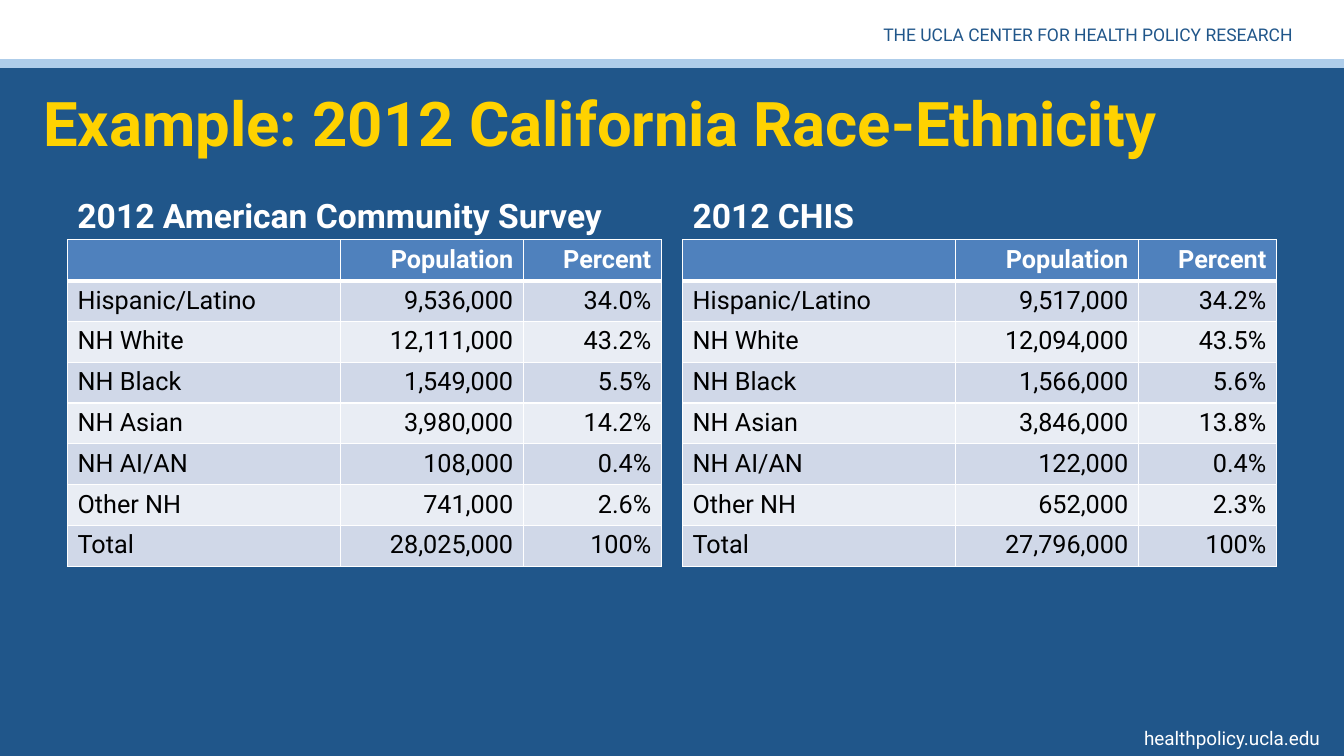
from dataclasses import dataclass

import lxml.etree
import pptx
import pptx.dml.color
import pptx.enum.shapes
import pptx.enum.text
import pptx.oxml.ns
import pptx.slide
import pptx.table
import pptx.util

Inches = pptx.util.Inches
RGBColor = pptx.dml.color.RGBColor
Align = pptx.enum.text.PP_ALIGN
Anchor = pptx.enum.text.MSO_ANCHOR

FONT = "Roboto"
NAVY = RGBColor(0x20, 0x56, 0x8A)
LIGHT_BLUE = RGBColor(0xAE, 0xCD, 0xEA)
YELLOW = RGBColor(0xFF, 0xD2, 0x00)
WHITE = RGBColor(0xFF, 0xFF, 0xFF)
BLACK = RGBColor(0x00, 0x00, 0x00)
HEADER_BLUE = RGBColor(0x4F, 0x81, 0xBD)
BAND_DARK = RGBColor(0xD0, 0xD8, 0xE8)
BAND_LIGHT = RGBColor(0xE9, 0xED, 0xF4)

SLIDE_WIDTH = 13.33
SURVEY_TOP = 1.68
TABLE_TOP = 2.38
TABLE_HEIGHT = 3.24
COLUMN_WIDTHS = (2.71, 1.81, 1.37)
TABLE_WIDTH = sum(COLUMN_WIDTHS)
HEADER = ("", "Population", "Percent")
GROUPS = ("Hispanic/Latino", "NH White", "NH Black", "NH Asian",
          "NH AI/AN", "Other NH", "Total")


@dataclass
class Label:
    text: str
    left: float
    top: float
    width: float
    height: float
    size: float
    color: RGBColor
    bold: bool = False
    align: Align = Align.LEFT
    anchor: Anchor = Anchor.TOP


@dataclass
class Survey:
    name: str
    left: float
    populations: tuple[str, ...]
    percents: tuple[str, ...]


LABELS = (
    Label("healthpolicy.ucla.edu", 10.75, 7.16, 2.44, 0.34, 13.5, WHITE,
          align=Align.RIGHT),
    Label("THE UCLA CENTER FOR HEALTH POLICY RESEARCH", 7.42, 0.19, 5.5, 0.32,
          12.5, NAVY, align=Align.RIGHT),
    Label("Example: 2012 California Race-Ethnicity", 0.33, 0.58, 12.67, 1.25,
          44, YELLOW, bold=True, anchor=Anchor.MIDDLE),
)

SURVEYS = (
    Survey("2012 American Community Survey", 0.67,
           ("9,536,000", "12,111,000", "1,549,000", "3,980,000",
            "108,000", "741,000", "28,025,000"),
           ("34.0%", "43.2%", "5.5%", "14.2%", "0.4%", "2.6%", "100%")),
    Survey("2012 CHIS", 6.77,
           ("9,517,000", "12,094,000", "1,566,000", "3,846,000",
            "122,000", "652,000", "27,796,000"),
           ("34.2%", "43.5%", "5.6%", "13.8%", "0.4%", "2.3%", "100%")),
)


def set_text(tf: pptx.text.text.TextFrame, text: str, size: float,
             color: RGBColor, bold: bool, align: Align) -> None:
    tf.text = text
    p = tf.paragraphs[0]
    p.alignment = align
    for r in p.runs:
        r.font.name = FONT
        r.font.size = pptx.util.Pt(size)
        r.font.bold = bold
        r.font.color.rgb = color


def add_label(s: pptx.slide.Slide, label: Label) -> None:
    sp = s.shapes.add_textbox(Inches(label.left), Inches(label.top),
                              Inches(label.width), Inches(label.height))
    tf = sp.text_frame
    tf.word_wrap = True
    tf.vertical_anchor = label.anchor
    set_text(tf, label.text, label.size, label.color, label.bold, label.align)


def add_banner(s: pptx.slide.Slide) -> None:
    sp = s.shapes.add_shape(pptx.enum.shapes.MSO_SHAPE.RECTANGLE, 0, 0,
                            Inches(SLIDE_WIDTH), Inches(0.67))
    sp.shadow.inherit = False
    sp.fill.solid()
    sp.fill.fore_color.rgb = WHITE
    sp.line.fill.background()


def add_rule(s: pptx.slide.Slide) -> None:
    line = s.shapes.add_connector(pptx.enum.shapes.MSO_CONNECTOR.STRAIGHT,
                                  0, Inches(0.63),
                                  Inches(SLIDE_WIDTH), Inches(0.63))
    line.line.color.rgb = LIGHT_BLUE
    line.line.width = pptx.util.Pt(6.27)
    lxml.etree.SubElement(line._element.spPr,
                          pptx.oxml.ns.qn("a:effectLst"))


def set_borders(cell: pptx.table._Cell, bottom: float) -> None:
    qn = pptx.oxml.ns.qn
    tc_pr = cell._tc.get_or_add_tcPr()
    for side, width in (("L", 1), ("R", 1), ("T", 1), ("B", bottom)):
        ln = lxml.etree.SubElement(tc_pr, qn(f"a:ln{side}"),
                                   w=str(pptx.util.Pt(width)))
        fill = lxml.etree.SubElement(ln, qn("a:solidFill"))
        lxml.etree.SubElement(fill, qn("a:srgbClr"), val=str(WHITE))


def add_survey(s: pptx.slide.Slide, survey: Survey) -> None:
    add_label(s, Label(survey.name, survey.left, SURVEY_TOP, TABLE_WIDTH,
                       TABLE_HEIGHT and TABLE_TOP - SURVEY_TOP, 24, WHITE,
                       bold=True, anchor=Anchor.BOTTOM))
    rows = [HEADER, *zip(GROUPS, survey.populations, survey.percents)]
    table = s.shapes.add_table(len(rows), len(HEADER), Inches(survey.left),
                               Inches(TABLE_TOP), Inches(TABLE_WIDTH),
                               Inches(TABLE_HEIGHT)).table
    for column, width in zip(table.columns, COLUMN_WIDTHS):
        column.width = Inches(width)
    for i, row in enumerate(rows):
        is_header = i == 0
        band = BAND_DARK if i % 2 else BAND_LIGHT
        for j, text in enumerate(row):
            cell = table.cell(i, j)
            set_borders(cell, 3 if is_header else 1)
            cell.fill.solid()
            cell.fill.fore_color.rgb = HEADER_BLUE if is_header else band
            set_text(cell.text_frame, text, 18,
                     WHITE if is_header else BLACK, is_header,
                     Align.RIGHT if j else Align.LEFT)


def main() -> None:
    prs = pptx.Presentation()
    prs.slide_width = Inches(SLIDE_WIDTH)
    prs.slide_height = Inches(7.5)
    s = prs.slides.add_slide(prs.slide_layouts[6])
    s.background.fill.solid()
    s.background.fill.fore_color.rgb = NAVY
    add_banner(s)
    add_rule(s)
    for label in LABELS:
        add_label(s, label)
    for survey in SURVEYS:
        add_survey(s, survey)
    prs.save("out.pptx")


if __name__ == "__main__":
    main()
